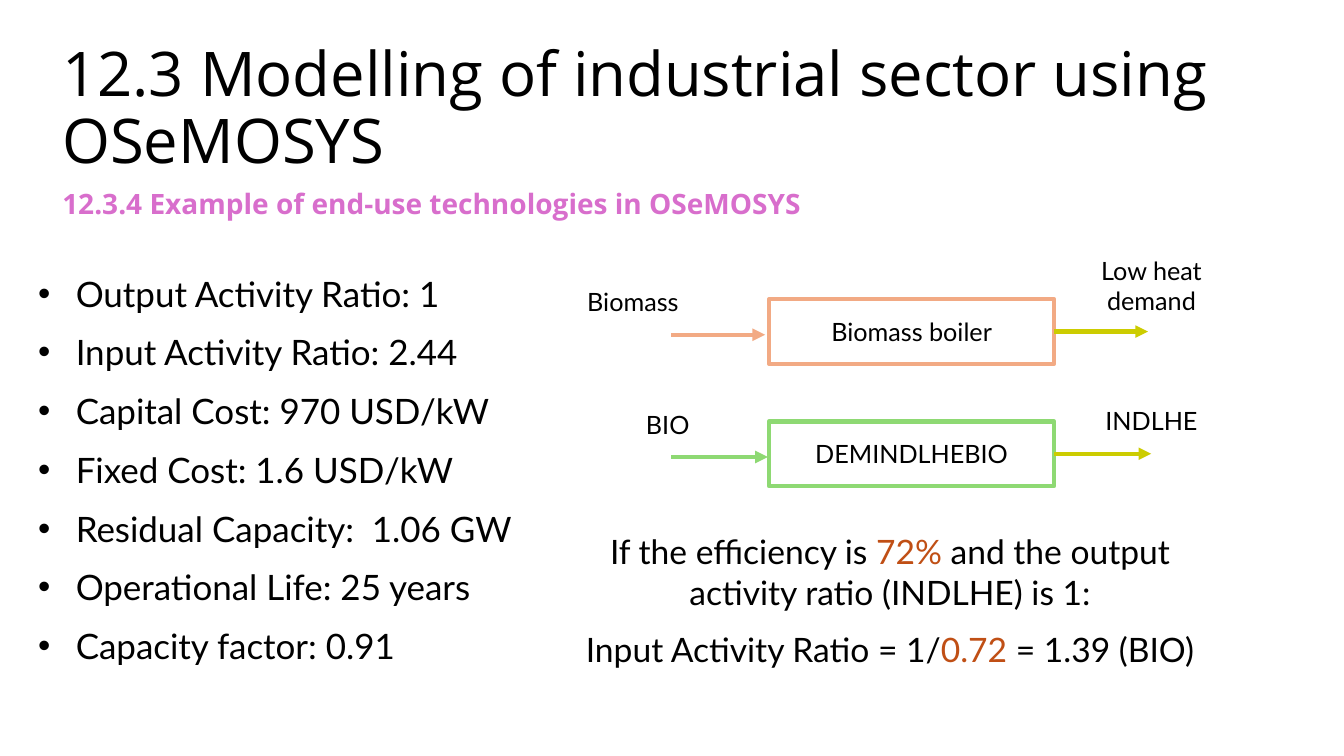
from lxml.etree import SubElement
from pptx import Presentation
from pptx.dml.color import RGBColor
from pptx.enum.shapes import MSO_CONNECTOR, MSO_SHAPE
from pptx.enum.text import MSO_ANCHOR, PP_ALIGN
from pptx.oxml.ns import qn
from pptx.util import Cm, Pt

BLACK = RGBColor(0x00, 0x00, 0x00)
PINK = RGBColor(0xD8, 0x6E, 0xCC)
ORANGE = RGBColor(0xF2, 0xAA, 0x84)
GREEN = RGBColor(0x8E, 0xD9, 0x73)
OLIVE = RGBColor(0xCC, 0xCC, 0x00)
RUST = RGBColor(0xC0, 0x4F, 0x15)

deck = Presentation()
deck.slide_width = Cm(33.87)
deck.slide_height = Cm(19.05)
page = deck.slides.add_slide(deck.slide_layouts[6])


def add_text(place, text, size, font="Lato", color=BLACK, align=PP_ALIGN.LEFT, after=0):
    box = page.shapes.add_textbox(*map(Cm, place))
    box.text_frame.word_wrap = True
    box.text_frame.text = text
    for para in box.text_frame.paragraphs:
        para.alignment = align
        para.space_after = Pt(after)
        for span in para.runs:
            span.font.size = Pt(size)
            span.font.name = font
            span.font.color.rgb = color
    return box


def add_arrow(start, end, y, color):
    arrow = page.shapes.add_connector(MSO_CONNECTOR.STRAIGHT, Cm(start), Cm(y), Cm(end), Cm(y))
    arrow.line.color.rgb = color
    arrow.line.width = Pt(3)
    SubElement(arrow.line._get_or_add_ln(), qn("a:tailEnd"), type="triangle")
    SubElement(arrow._element.spPr, qn("a:effectLst"))


title = add_text((1.32, 0.56, 30.84, 4.01), "12.3 Modelling of industrial sector using OSeMOSYS",
                 44, "Open Sans")
title.text_frame.vertical_anchor = MSO_ANCHOR.BOTTOM
title.text_frame.paragraphs[0].line_spacing = 0.9

subtitle = add_text((1.32, 4.57, 24.26, 1.12), "12.3.4 Example of end-use technologies in OSeMOSYS",
                    20, "Open Sans", PINK, after=12)
subtitle.text_frame.paragraphs[0].runs[0].font.bold = True

parameters = [
    "Output Activity Ratio: 1",
    "Input Activity Ratio: 2.44",
    "Capital Cost: 970 USD/kW",
    "Fixed Cost: 1.6 USD/kW",
    "Residual Capacity:  1.06 GW",
    "Operational Life: 25 years",
    "Capacity factor: 0.91",
]
parameter_list = add_text((0.71, 6.73, 12.98, 10.31), "\n".join(parameters), 25, after=12)
for para in parameter_list.text_frame.paragraphs:
    properties = para._p.get_or_add_pPr()
    properties.set("marL", str(Cm(0.95)))
    properties.set("indent", str(Cm(-0.95)))
    SubElement(properties, qn("a:buFont"), typeface="Arial")
    SubElement(properties, qn("a:buChar"), char="•")

BOX_LEFT, BOX_WIDTH, BOX_HEIGHT = 19.38, 7.19, 1.63
BOX_RIGHT = BOX_LEFT + BOX_WIDTH
flows = [
    ("Biomass boiler", ORANGE, "Biomass", 14.55, 7.09, 19.28, "Low heat demand", 6.3, 28.93),
    ("DEMINDLHEBIO", GREEN, "BIO", 16.03, 10.19, 19.35, "INDLHE", 10.08, 29.01),
]
for row, (name, color, fuel, fuel_left, fuel_top, fuel_end,
          demand, demand_top, demand_end) in enumerate(flows):
    top = 7.54 + row * 3.08
    technology = page.shapes.add_shape(MSO_SHAPE.RECTANGLE, Cm(BOX_LEFT), Cm(top),
                                       Cm(BOX_WIDTH), Cm(BOX_HEIGHT))
    technology.shadow.inherit = False
    technology.fill.background()
    technology.line.color.rgb = color
    technology.line.width = Pt(3)
    technology.text_frame.text = name
    technology.text_frame.vertical_anchor = MSO_ANCHOR.MIDDLE
    para = technology.text_frame.paragraphs[0]
    para.alignment = PP_ALIGN.CENTER
    font = para.runs[0].font
    font.size = Pt(18)
    font.name = "Lato"
    font.color.rgb = BLACK

    middle = top + BOX_HEIGHT / 2
    add_arrow(16.92, fuel_end, middle + 0.08, color)
    add_arrow(BOX_RIGHT, demand_end, middle, OLIVE)
    add_text((fuel_left, fuel_top, 4, 1.02), fuel, 18)
    add_text((27.28, demand_top, 3.48, 1.02), demand, 18, align=PP_ALIGN.CENTER)

example = [
    ("If the efficiency is ", "72%", " and the output activity ratio (INDLHE) is 1:"),
    ("Input Activity Ratio = 1/", "0.72", " = 1.39 (BIO)"),
]
calculation = add_text((13.97, 13.26, 16.92, 3.76), "\n", 24, align=PP_ALIGN.CENTER, after=12)
for para, parts in zip(calculation.text_frame.paragraphs, example):
    for text, color in zip(parts, (BLACK, RUST, BLACK)):
        span = para.add_run()
        span.text = text
        span.font.size = Pt(24)
        span.font.name = "Lato"
        span.font.color.rgb = color

deck.save("out.pptx")
